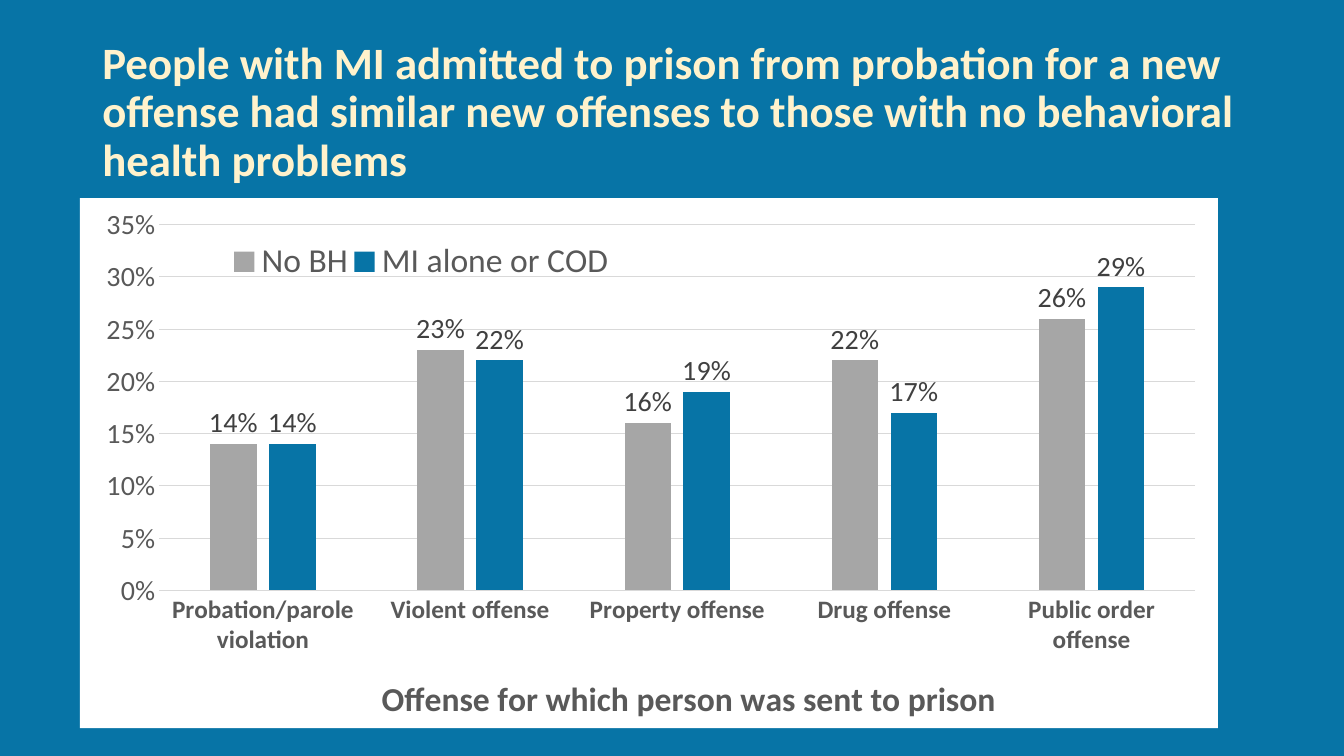
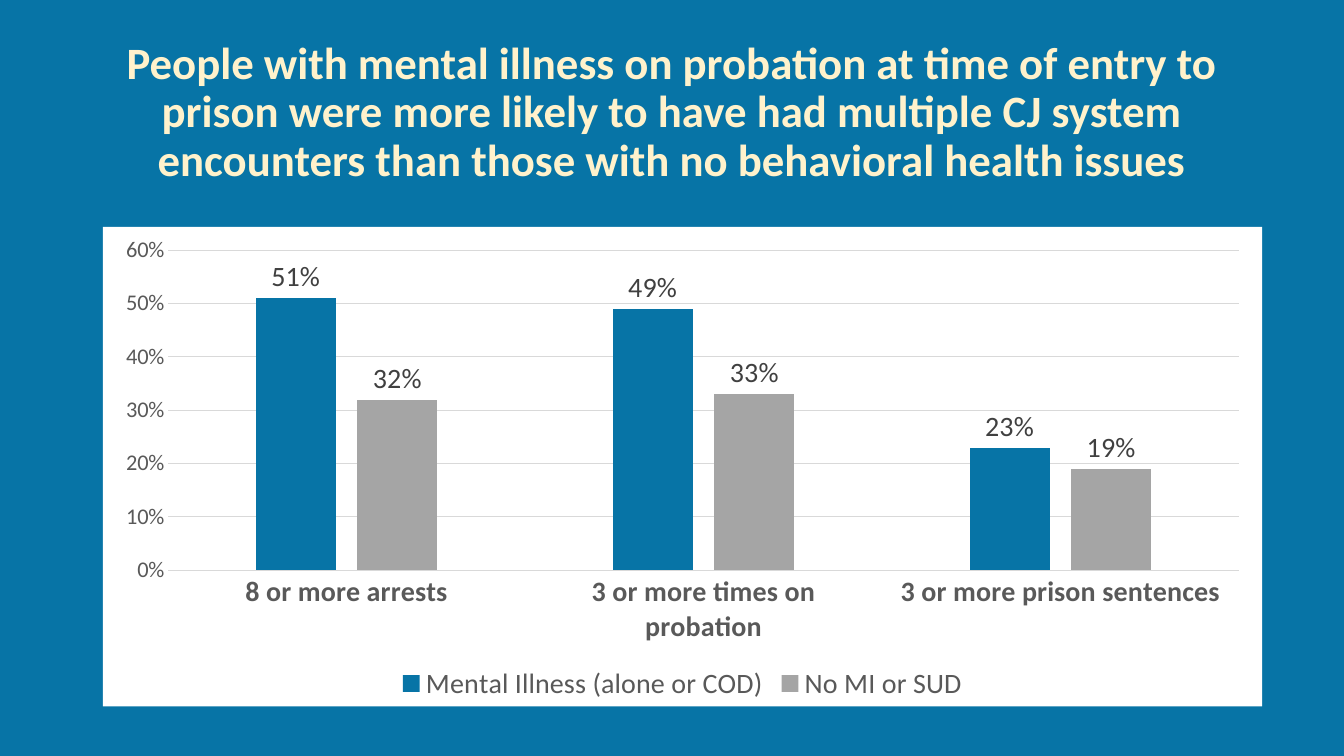
from dataclasses import dataclass
from typing import Any

from lxml import etree
from pptx import Presentation
from pptx.chart.data import CategoryChartData
from pptx.dml.color import RGBColor
from pptx.enum.chart import XL_CHART_TYPE, XL_LABEL_POSITION, XL_LEGEND_POSITION, XL_TICK_MARK
from pptx.enum.text import MSO_ANCHOR, PP_ALIGN
from pptx.oxml import parse_xml
from pptx.oxml.ns import nsdecls, qn
from pptx.util import Emu, Inches, Pt

COLUMN = XL_CHART_TYPE.COLUMN_CLUSTERED
OUTSIDE = XL_LABEL_POSITION.OUTSIDE_END
BOTTOM = XL_LEGEND_POSITION.BOTTOM
NO_TICK = XL_TICK_MARK.NONE
MIDDLE = MSO_ANCHOR.MIDDLE
LEFT, CENTER = PP_ALIGN.LEFT, PP_ALIGN.CENTER

FONT = "Calibri"
COLORS = {
    "blue": "0774A6", "cream": "FFF2CC", "white": "FFFFFF", "gray": "A6A6A6",
    "steel": "A5A5A5", "text": "595959", "label": "404040", "grid": "D9D9D9",
}

# Slide grid: 160 columns by 90 rows
WIDTH, HEIGHT = Inches(13.33), Inches(7.5)
COLS, ROWS = 160, 90
Box = tuple[float, float, float, float]
HEAD: Box = (11, 4.8, 138, 17.4)


@dataclass(frozen=True)
class Series:
    name: str
    color: str
    values: tuple[float, ...]


@dataclass(frozen=True)
class Page:
    title: str
    align: Any
    box: Box
    groups: tuple[str, ...]
    series: tuple[Series, ...]
    top: float
    step: float
    sizes: tuple[int, int, int]  # group names, value axis, legend
    caption: str = ""
    plot: tuple[float, ...] = ()  # shares of the chart's size
    legend: tuple[float, ...] = ()
    foot: tuple[float, ...] = ()


PAGES = (
    Page(
        "People with MI admitted to prison from probation for a new offense had "
        "similar new offenses to those with no behavioral health problems",
        LEFT, (9.5, 23.6, 135.5, 63.4),
        ("Probation/parole violation", "Violent offense", "Property offense",
         "Drug offense", "Public order offense"),
        (Series("No BH", "gray", (0.14, 0.23, 0.16, 0.22, 0.26)),
         Series("MI alone or COD", "blue", (0.14, 0.22, 0.19, 0.17, 0.29))),
        0.35, 0.05, (18, 20, 24),
        caption="Offense for which person was sent to prison",
        plot=(0.07, 0.05, 0.91, 0.69), legend=(0.13, 0.08, 0.34, 0.08), foot=(0.26, 0.89),
    ),
    Page(
        "People with mental illness on probation at time of entry to prison were more "
        "likely to have had multiple CJ system encounters than those with no "
        "behavioral health issues",
        CENTER, (12.25, 27, 138, 57.1),
        ("8 or more arrests", "3 or more times on probation", "3 or more prison sentences"),
        (Series("Mental Illness (alone or COD)", "blue", (0.51, 0.49, 0.23)),
         Series("No MI or SUD", "steel", (0.32, 0.33, 0.19))),
        0.6, 0.1, (20, 16, 20),
    ),
)


def tint(name: str) -> RGBColor:
    return RGBColor.from_string(COLORS[name])


def spot(box: Box) -> list[Emu]:
    units = (WIDTH / COLS, HEIGHT / ROWS) * 2
    return [Emu(round(part * unit)) for part, unit in zip(box, units)]


def apply(item: Any, values: dict[str, Any]) -> None:
    for key, value in values.items():
        setattr(item, key, value)


def style(font: Any, size: int, color: str, bold: bool = False) -> None:
    apply(font, {"name": FONT, "size": Pt(size), "bold": bold})
    font.color.rgb = tint(color)


def rule(line: Any) -> None:
    line.color.rgb = tint("grid")
    line.width = Pt(0.75)


def place(part: Any, index: int, shares: tuple[float, ...], inner: bool = False) -> None:
    """Fix the place of a chart part by shares of the chart's size."""
    if not shares:
        return
    for old in part.findall(qn("c:layout")):
        part.remove(old)
    layout = parse_xml(f"<c:layout {nsdecls('c')}><c:manualLayout/></c:layout>")
    pairs = [("layoutTarget", "inner")] if inner else []
    pairs += [("xMode", "edge"), ("yMode", "edge"), *zip("xywh", shares)]
    for tag, value in pairs:
        etree.SubElement(layout[0], qn(f"c:{tag}")).set("val", str(value))
    part.insert(index, layout)


def panel() -> Any:
    return parse_xml(
        f"<c:spPr {nsdecls('c', 'a')}><a:solidFill><a:srgbClr val=\"{COLORS['white']}\"/>"
        "</a:solidFill><a:ln><a:noFill/></a:ln></c:spPr>"
    )


def add_head(slide: Any, page: Page) -> None:
    frame = slide.shapes.add_textbox(*spot(HEAD)).text_frame
    apply(frame, {"word_wrap": True, "vertical_anchor": MIDDLE})
    line = frame.paragraphs[0]
    apply(line, {"text": page.title, "alignment": page.align, "line_spacing": 0.9})
    style(line.runs[0].font, 32, "cream", True)


def set_axes(chart: Any, page: Page) -> None:
    names, scale = chart.category_axis, chart.value_axis
    for axis in (names, scale):
        apply(axis, {"major_tick_mark": NO_TICK, "minor_tick_mark": NO_TICK})
    style(names.tick_labels.font, page.sizes[0], "text", True)
    rule(names.format.line)
    apply(scale, {"minimum_scale": 0, "maximum_scale": page.top, "major_unit": page.step})
    apply(scale.tick_labels, {"number_format": "0%", "number_format_is_linked": False})
    style(scale.tick_labels.font, page.sizes[1], "text")
    scale.format.line.fill.background()
    rule(scale.major_gridlines.format.line)
    if page.caption:
        title = names.axis_title
        line = title.text_frame.paragraphs[0]
        line.text = page.caption
        style(line.runs[0].font, 24, "text", True)
        place(title.element if hasattr(title, "element") else title._element, 1, page.foot)


def add_bars(slide: Any, page: Page) -> None:
    data = CategoryChartData(number_format="0%")
    data.categories = page.groups
    for item in page.series:
        data.add_series(item.name, item.values)
    chart = slide.shapes.add_chart(COLUMN, *spot(page.box), data).chart
    apply(chart, {"has_title": False, "has_legend": True})
    chart.font.name = FONT

    # Bars and their values
    plot = chart.plots[0]
    apply(plot, {"gap_width": 219, "overlap": -27, "vary_by_categories": False})
    for bars, item in zip(plot.series, page.series):
        bars.format.fill.solid()
        bars.format.fill.fore_color.rgb = tint(item.color)
        labels = bars.data_labels
        apply(labels, {"show_value": True, "position": OUTSIDE,
                       "number_format": "0%", "number_format_is_linked": False})
        style(labels.font, 20, "label")
    set_axes(chart, page)

    # Legend
    legend = chart.legend
    apply(legend, {"position": BOTTOM, "include_in_layout": False})
    style(legend.font, page.sizes[2], "text")
    place(legend._element, 1, page.legend)

    # White panel and plot area
    root = chart._chartSpace.find(qn("c:chart"))
    area = root.find(qn("c:plotArea"))
    root.addnext(panel())
    area.append(panel())
    place(area, 0, page.plot, inner=True)


def main() -> None:
    deck = Presentation()
    apply(deck, {"slide_width": WIDTH, "slide_height": HEIGHT})
    fill = deck.slide_master.background.fill
    fill.solid()
    fill.fore_color.rgb = tint("blue")
    for page in PAGES:
        slide = deck.slides.add_slide(deck.slide_layouts[6])
        add_head(slide, page)
        add_bars(slide, page)
    deck.save("out.pptx")


if __name__ == "__main__":
    main()
